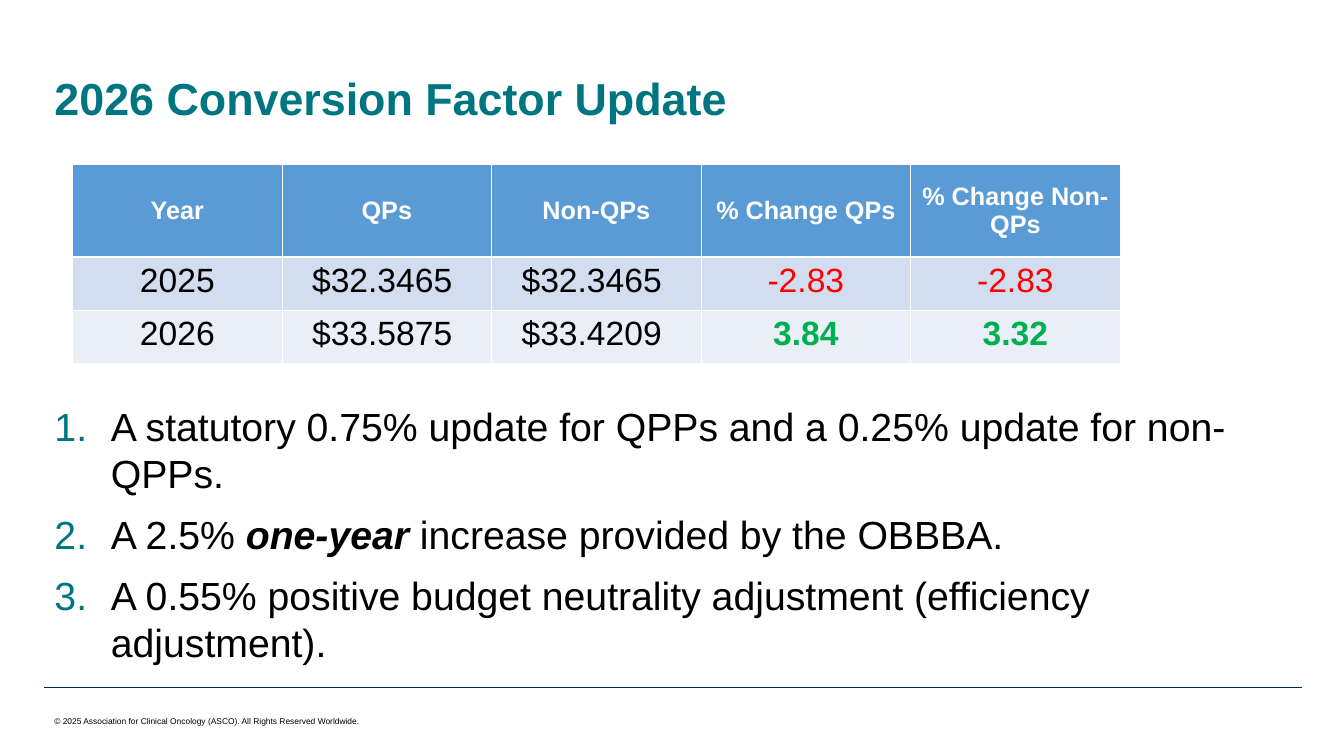
from dataclasses import dataclass

from lxml import etree
from pptx import Presentation
from pptx.dml.color import RGBColor
from pptx.enum.text import MSO_ANCHOR, MSO_AUTO_SIZE, PP_ALIGN
from pptx.oxml.ns import qn
from pptx.util import Inches, Pt

LEFT, CENTER = PP_ALIGN.LEFT, PP_ALIGN.CENTER
TOP, MIDDLE, BOTTOM = MSO_ANCHOR.TOP, MSO_ANCHOR.MIDDLE, MSO_ANCHOR.BOTTOM
NO_FIT = MSO_AUTO_SIZE.NONE


@dataclass(frozen=True)
class Theme:
    font: str = "Arial"
    teal: str = "007582"
    navy: str = "002557"
    black: str = "000000"
    white: str = "FFFFFF"
    red: str = "FF0000"
    green: str = "00B050"
    head: str = "5B9BD5"
    bands: tuple = ("D2DEEF", "EAEFF7")
    title: int = 32
    body: int = 28
    cell: int = 24
    label: int = 18
    note: int = 6


TITLE = "2026 Conversion Factor Update"
HEADS = ["Year", "QPs", "Non-QPs", "% Change QPs", "% Change Non-QPs"]
RATES = [
    ["2025", "$32.3465 ", "$32.3465 ", "-2.83", "-2.83"],
    ["2026", "$33.5875 ", "$33.4209 ", "3.84", "3.32"],
]
# Each item is a list of (text, stressed) runs.
CAUSES = [
    [("A statutory 0.75% update for QPPs and a 0.25% update for non-QPPs.", False)],
    [("A 2.5% ", False), ("one-year ", True),
     ("increase provided by the OBBBA.", False)],
    [("A 0.55% positive budget neutrality adjustment (efficiency adjustment).", False)],
]
RIGHTS = "© 2025 Association for Clinical Oncology (ASCO). All Rights Reserved Worldwide."


class Deck:
    def __init__(self, theme):
        self.theme = theme
        self.file = Presentation()
        self.file.slide_width = Inches(13.33)
        self.file.slide_height = Inches(7.5)
        self.slide = self.file.slides.add_slide(self.file.slide_layouts[1])

    def style(self, para, size, color, bold=False, align=LEFT):
        para.alignment = align
        font = para.font
        font.name, font.size, font.bold = self.theme.font, Pt(size), bold
        font.color.rgb = RGBColor.from_string(color)

    def place(self, shape, box, anchor):
        shape.left, shape.top, shape.width, shape.height = map(Inches, box)
        frame = shape.text_frame
        frame.auto_size = NO_FIT
        frame.vertical_anchor = anchor
        return frame

    def title(self, text, box):
        frame = self.place(self.slide.shapes.title, box, BOTTOM)
        frame.text = text
        para = frame.paragraphs[0]
        para.line_spacing = 0.9
        self.style(para, self.theme.title, self.theme.teal, True)

    def number(self, para, indent):
        """Give the paragraph a hanging, coloured list number."""
        props = para._p.get_or_add_pPr()
        props.set("marL", str(Inches(indent)))
        props.set("indent", str(-Inches(indent)))
        tint = etree.SubElement(props, qn("a:buClr"))
        etree.SubElement(tint, qn("a:srgbClr"), val=self.theme.teal)
        etree.SubElement(props, qn("a:buFont"), typeface=self.theme.font)
        etree.SubElement(props, qn("a:buAutoNum"), type="arabicPeriod")

    def list(self, items, box):
        frame = self.place(self.slide.placeholders[1], box, TOP)
        for i, item in enumerate(items):
            para = frame.add_paragraph() if i else frame.paragraphs[0]
            self.number(para, 0.56)
            para.space_before = Pt(10 if i else 0)
            self.style(para, self.theme.body, self.theme.black)
            for text, stress in item:
                run = para.add_run()
                run.text = text
                if stress:
                    run.font.bold = run.font.italic = True

    def cell(self, cell, text, fill, size, color, bold, anchor):
        cell.text = text
        cell.vertical_anchor = anchor
        cell.fill.solid()
        cell.fill.fore_color.rgb = RGBColor.from_string(fill)
        self.style(cell.text_frame.paragraphs[0], size, color, bold, CENTER)

    def table(self, heads, rows, box, heights):
        look = self.theme
        grid = self.slide.shapes.add_table(
            len(rows) + 1, len(heads), *map(Inches, box)).table
        for row, height in zip(grid.rows, heights):
            row.height = Inches(height)
        for col, text in enumerate(heads):
            self.cell(grid.cell(0, col), text, look.head, look.label,
                      look.white, True, MIDDLE)
        for i, row in enumerate(rows):
            for col, text in enumerate(row):
                change = col > 2
                gain = change and float(text) > 0
                color = look.green if gain else look.red if change else look.black
                self.cell(grid.cell(i + 1, col), text, look.bands[i % 2],
                          look.cell, color, gain, TOP)

    def rule(self, left, right, top):
        line = self.slide.shapes.add_connector(
            1, Inches(left), Inches(top), Inches(right), Inches(top))
        line.line.color.rgb = RGBColor.from_string(self.theme.navy)
        line.line.width = Pt(0.25)
        etree.SubElement(line._element.spPr, qn("a:effectLst"))

    def note(self, text, box):
        shape = self.slide.shapes.add_textbox(*map(Inches, box))
        frame = self.place(shape, box, TOP)
        frame.word_wrap = False
        frame.text = text
        self.style(frame.paragraphs[0], self.theme.note, self.theme.black)


def main():
    deck = Deck(Theme())
    deck.rule(0.44, 12.91, 6.82)
    deck.note(RIGHTS, (0.44, 7.06, 3.3, 0.2))
    deck.title(TITLE, (0.44, 0.24, 12.45, 1.05))
    deck.list(CAUSES, (0.44, 3.94, 12.45, 2.7))
    deck.table(HEADS, RATES, (0.72, 1.63, 10.39, 1.98), (0.92, 0.53, 0.53))
    deck.file.save("out.pptx")


if __name__ == "__main__":
    main()
